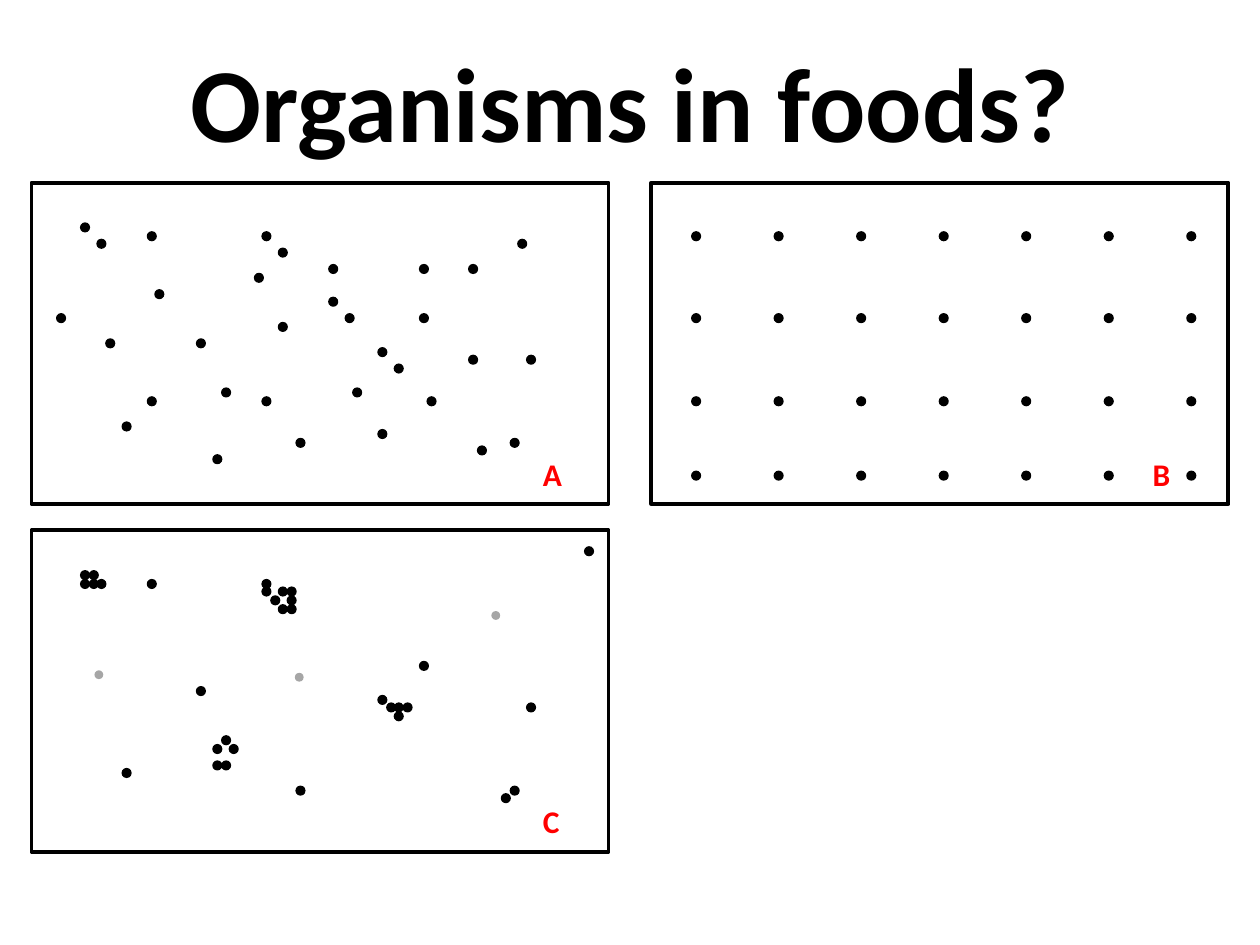
from itertools import product

from pptx import Presentation
from pptx.dml.color import RGBColor
from pptx.enum import shapes, text
from pptx.util import Inches, Pt

BLACK = RGBColor(0x00, 0x00, 0x00)
WHITE = RGBColor(0xFF, 0xFF, 0xFF)
RED = RGBColor(0xFF, 0x00, 0x00)
GRAY = RGBColor(0xA6, 0xA6, 0xA6)

FONT = "Calibri"
PANEL_W, PANEL_H = 4.58, 2.55
DOT = 0.07

# Dot offsets in inches from the top left corner of their panel
RANDOM = [
    (0.39, 0.32), (0.52, 0.45), (0.72, 1.9), (0.92, 0.39), (0.2, 1.04),
    (1.83, 0.39), (0.59, 1.24), (0.92, 1.7), (1.77, 0.72), (3.47, 1.37),
    (2.55, 1.63), (1.83, 1.7), (3.08, 0.65), (1.31, 1.24), (1.51, 1.63),
    (3.47, 0.65), (1.44, 2.16), (2.1, 2.03), (3.8, 2.03), (1.96, 0.52),
    (1.96, 1.11), (2.36, 0.65), (2.36, 0.91), (2.49, 1.04), (3.08, 1.04),
    (2.75, 1.31), (2.88, 1.44), (2.75, 1.96), (3.14, 1.7), (3.93, 1.37),
    (3.86, 0.45), (3.54, 2.09), (0.98, 0.85),
]
EVEN = [(0.32 + 3.93 * col / 6, y)
        for y, col in product((0.39, 1.04, 1.7, 2.29), range(7))]
CLUSTERED = [
    (0.39, 0.32), (0.46, 0.32), (0.39, 0.39), (0.46, 0.39), (0.52, 0.39),
    (1.83, 0.39), (1.83, 0.45), (1.9, 0.52), (1.96, 0.45), (2.03, 0.45),
    (2.03, 0.52), (1.96, 0.59), (2.03, 0.59),
    (1.51, 1.63), (1.44, 1.7), (1.57, 1.7), (1.44, 1.83), (1.51, 1.83),
    (2.75, 1.31), (2.82, 1.37), (2.88, 1.37), (2.95, 1.37), (2.88, 1.44),
    (3.8, 2.03), (3.73, 2.09),
    (0.72, 1.89), (0.92, 0.39), (4.39, 0.13), (1.31, 1.24), (2.1, 2.03),
    (3.08, 1.04), (3.93, 1.37),
]
FAINT = [(3.65, 0.64), (2.09, 1.13), (0.5, 1.11)]


def add_text(s, x, y, w, h, words, size, color, wrap=True):
    tf = s.shapes.add_textbox(Inches(x), Inches(y), Inches(w), Inches(h)).text_frame
    tf.word_wrap = wrap
    r = tf.paragraphs[0].add_run()
    r.text = words
    r.font.name, r.font.size, r.font.bold = FONT, Pt(size), True
    r.font.color.rgb = color
    return tf


def add_title(s, x, y, w, h):
    tf = add_text(s, x, y, w, h, "Organisms in foods?", 60, BLACK)
    tf.vertical_anchor = text.MSO_ANCHOR.MIDDLE
    tf.paragraphs[0].alignment = text.PP_ALIGN.CENTER


def add_filled(group, kind, x, y, w, h, fill, line_width):
    """Add a shape with a black outline, or none when line_width is 0."""
    sp = group.shapes.add_shape(kind, Inches(x), Inches(y), Inches(w), Inches(h))
    sp.shadow.inherit = False
    sp.fill.solid()
    sp.fill.fore_color.rgb = fill
    if line_width:
        sp.line.color.rgb = BLACK
        sp.line.width = Pt(line_width)
    else:
        sp.line.fill.background()


def add_panel(s, x, y, label, label_dx, dots, faint=()):
    group = s.shapes.add_group_shape()
    add_filled(group, shapes.MSO_SHAPE.RECTANGLE, x, y, PANEL_W, PANEL_H, WHITE, 2.25)
    for points, color, line_width in ((dots, BLACK, 0.75), (faint, GRAY, 0)):
        for dx, dy in points:
            add_filled(group, shapes.MSO_SHAPE.OVAL, x + dx, y + dy, DOT, DOT,
                       color, line_width)
    add_text(s, x + label_dx, y + 2.11, 0.44, 0.5, label, 18, RED, wrap=False)


def main():
    prs = Presentation()
    prs.slide_width, prs.slide_height = Inches(10), Inches(7.5)
    s = prs.slides.add_slide(prs.slide_layouts[6])
    add_title(s, 0.75, 0.17, 8.5, 1.25)
    add_panel(s, 0.25, 1.45, "A", 3.96, RANDOM)
    add_panel(s, 5.17, 1.45, "B", 3.88, EVEN)
    add_panel(s, 0.25, 4.21, "C", 3.96, CLUSTERED, FAINT)
    prs.save("out.pptx")


if __name__ == "__main__":
    main()
